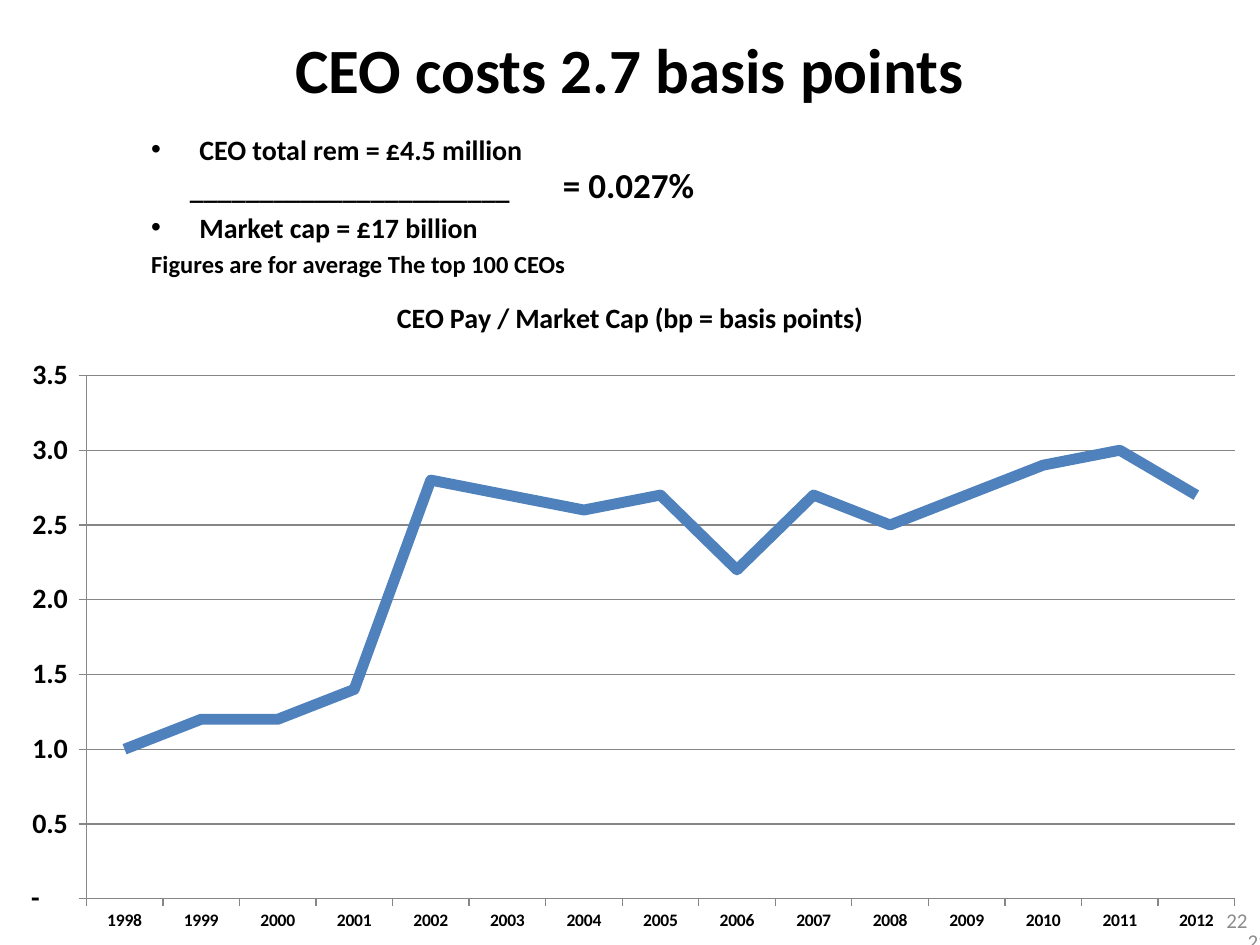
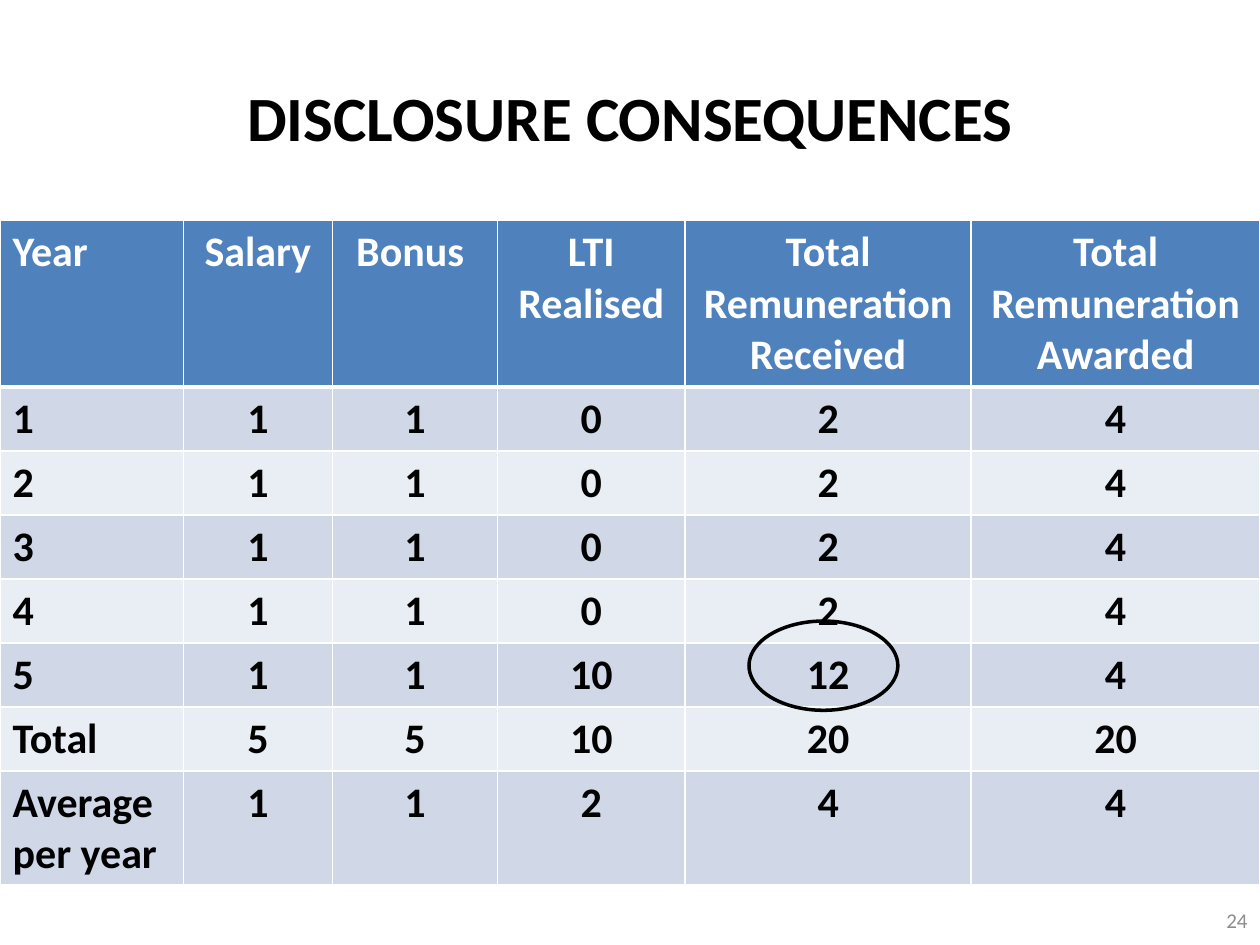
"""Build two slides on chief executive pay: a cost chart and a disclosure table."""
from dataclasses import dataclass

import lxml.etree
import pptx
import pptx.chart.data
import pptx.dml.color
import pptx.enum.chart
import pptx.enum.shapes
import pptx.enum.text
import pptx.oxml
import pptx.oxml.ns
import pptx.util
from pptx.util import Cm

ALIGN = pptx.enum.text.PP_ALIGN
ANCHOR = pptx.enum.text.MSO_ANCHOR


@dataclass(frozen=True)
class Theme:
    """Hold the colours, font and type sizes that the slides share."""
    font: str = "Calibri"
    bullet_font: str = "Arial"
    ink: str = "000000"
    paper: str = "FFFFFF"
    accent: str = "4F81BD"
    odd_row: str = "D0D8E8"
    even_row: str = "E9EDF4"
    grid: str = "868686"
    muted: str = "8C8C8C"
    title: int = 36
    table: int = 24
    result: int = 20
    body: int = 16
    note: int = 14
    small: int = 12
    tick: int = 10


THEME = Theme()

YEARS = [str(year) for year in range(1998, 2013)]
BASIS_POINTS = [1.0, 1.2, 1.2, 1.4, 2.8, 2.7, 2.6, 2.7,
                2.2, 2.7, 2.5, 2.7, 2.9, 3.0, 2.7]
CHART_WIDTH, CHART_HEIGHT = 25.4, 13.51
PAY_ROWS = [
    ["Year", "Salary", "Bonus ", "LTI Realised",
     "Total Remuneration Received", "Total Remuneration Awarded"],
    *[[str(year), "1", "1", "0", "2", "4"] for year in range(1, 5)],
    ["5", "1", "1", "10", "12", "4"],
    ["Total", "5", "5", "10", "20", "20"],
    ["Average per year", "1", "1", "2", "4", "4"],
]
COLUMN_WIDTHS = [3.7, 3, 3.33, 3.78, 5.77, 5.82]
ROW_HEIGHTS = [3.35] + [1.29] * 6 + [2.3]


def colour(code):
    """Return the RGB colour for a hex code."""
    return pptx.dml.color.RGBColor.from_string(code)


def style_font(font, size, ink=THEME.ink, bold=True):
    """Apply the deck's font with a size, colour and weight."""
    font.name = THEME.font
    font.size = pptx.util.Pt(size)
    font.bold = bold
    font.color.rgb = colour(ink)


def write_text(para, text, size=THEME.body, ink=THEME.ink, bold=True,
               align=ALIGN.LEFT, before=0, indent=0, bullet=False):
    """Write one formatted paragraph."""
    properties = para._p.get_or_add_pPr()
    if indent:
        properties.set("marL", str(Cm(indent)))
        properties.set("indent", str(-Cm(indent) if bullet else 0))
    if bullet:
        for tag, name, value in [("a:buFont", "typeface", THEME.bullet_font),
                                 ("a:buChar", "char", "•")]:
            mark = lxml.etree.SubElement(properties, pptx.oxml.ns.qn(tag))
            mark.set(name, value)
    para.alignment = align
    para.space_before = pptx.util.Pt(before)
    span = para.add_run()
    span.text = text
    style_font(span.font, size, ink, bold)


def add_box(page, left, top, width, height, anchor=ANCHOR.TOP):
    """Add a wrapping text box and return its text frame."""
    box = page.shapes.add_textbox(Cm(left), Cm(top), Cm(width), Cm(height))
    frame = box.text_frame
    frame.word_wrap = True
    frame.vertical_anchor = anchor
    return frame


def add_title(page, text, left, top, width, height):
    """Add a centred slide title."""
    frame = add_box(page, left, top, width, height, ANCHOR.MIDDLE)
    write_text(frame.paragraphs[0], text, size=THEME.title, align=ALIGN.CENTER)


def add_page_number(page, number, left=23.7, top=18.03):
    """Add a grey page number at the lower right."""
    frame = add_box(page, left, top, 1.7, 1.02, ANCHOR.MIDDLE)
    write_text(frame.paragraphs[0], str(number), size=THEME.small,
               ink=THEME.muted, bold=False, align=ALIGN.RIGHT)


def add_ratio(page):
    """Add pay over market value as a fraction with its result."""
    lines = [
        ("CEO total rem = £4.5 million", dict(indent=0.97, bullet=True)),
        ("_" * 23, dict(indent=0.78, before=3)),
        ("Market cap = £17 billion", dict(indent=0.97, bullet=True, before=3)),
        ("Figures are for average The top 100 CEOs",
         dict(size=THEME.note, before=3)),
    ]
    frame = add_box(page, 2.8, 2.55, 19.79, 4.39)
    for index, (text, look) in enumerate(lines):
        para = frame.add_paragraph() if index else frame.paragraphs[0]
        write_text(para, text, **look)
    result = add_box(page, 11.1, 3.18, 5.21, 1.2)
    write_text(result.paragraphs[0], "= 0.027%", size=THEME.result)


def place_chart_part(part, left, top, width=None, height=None):
    """Place a chart part by hand, with lengths in centimetres."""
    for old in part.findall(pptx.oxml.ns.qn("c:layout")):
        part.remove(old)
    values = {"xMode": "edge", "yMode": "edge",
              "x": left / CHART_WIDTH, "y": top / CHART_HEIGHT}
    if width:
        values = {"layoutTarget": "inner", **values,
                  "w": width / CHART_WIDTH, "h": height / CHART_HEIGHT}
    settings = "".join(f'<c:{name} val="{value}"/>'
                       for name, value in values.items())
    layout = pptx.oxml.parse_xml(
        f'<c:layout {pptx.oxml.ns.nsdecls("c")}><c:manualLayout>'
        f'{settings}</c:manualLayout></c:layout>')
    text = part.find(pptx.oxml.ns.qn("c:tx"))
    part.insert(0 if text is None else part.index(text) + 1, layout)


def style_axis(axis, size):
    """Give a chart axis its type and grey line."""
    style_font(axis.tick_labels.font, size)
    axis.major_tick_mark = pptx.enum.chart.XL_TICK_MARK.OUTSIDE
    axis.format.line.color.rgb = colour(THEME.grid)
    axis.format.line.width = pptx.util.Pt(0.75)


def add_pay_chart(page):
    """Add the line chart of pay against market value."""
    data = pptx.chart.data.CategoryChartData()
    data.categories = YEARS
    data.add_series("Series 1", BASIS_POINTS)
    chart = page.shapes.add_chart(
        pptx.enum.chart.XL_CHART_TYPE.LINE, Cm(0), Cm(5.54),
        Cm(CHART_WIDTH), Cm(CHART_HEIGHT), data).chart
    style_font(chart.font, THEME.tick)
    chart.has_legend = False
    chart.has_title = True
    write_text(chart.chart_title.text_frame.paragraphs[0],
               "CEO Pay / Market Cap (bp = basis points)", align=ALIGN.CENTER)
    chart.chart_title.include_in_layout = True
    place_chart_part(chart.chart_title._element, 7.9, 0.38)
    place_chart_part(chart._chartSpace.chart.plotArea, 1.74, 2.03, 23.15, 10.55)

    style_axis(chart.category_axis, THEME.tick)
    values = chart.value_axis
    style_axis(values, THEME.body)
    values.minimum_scale, values.maximum_scale, values.major_unit = 0, 3.5, 0.5
    values.has_major_gridlines = True
    values.major_gridlines.format.line.color.rgb = colour(THEME.grid)
    values.major_gridlines.format.line.width = pptx.util.Pt(0.75)
    values.tick_labels.number_format = (
        '_-* #,##0.0_-;\\-* #,##0.0_-;_-* "-"??_-;')
    values.tick_labels.number_format_is_linked = False

    plot = chart.plots[0]
    plot.vary_by_categories = False
    series = plot.series[0]
    series.smooth = False
    series.marker.style = pptx.enum.chart.XL_MARKER_STYLE.NONE
    series.format.line.color.rgb = colour(THEME.accent)
    series.format.line.width = pptx.util.Pt(6.25)


def draw_borders(cell, **widths):
    """Draw white cell borders, keyed by side, in points."""
    properties = cell._tc.get_or_add_tcPr()
    for side, width in widths.items():
        properties.append(pptx.oxml.parse_xml(
            f'<a:ln{side} {pptx.oxml.ns.nsdecls("a")} '
            f'w="{pptx.util.Pt(width)}"><a:solidFill>'
            f'<a:srgbClr val="{THEME.paper}"/></a:solidFill></a:ln{side}>'))


def add_pay_table(page):
    """Add the banded table of pay by year."""
    table = page.shapes.add_table(
        len(PAY_ROWS), len(COLUMN_WIDTHS), Cm(0), Cm(4.45),
        Cm(sum(COLUMN_WIDTHS)), Cm(sum(ROW_HEIGHTS))).table
    for column, width in zip(table.columns, COLUMN_WIDTHS):
        column.width = Cm(width)
    for row, height in zip(table.rows, ROW_HEIGHTS):
        row.height = Cm(height)
    for row_index, texts in enumerate(PAY_ROWS):
        header = row_index == 0
        band = THEME.odd_row if row_index % 2 else THEME.even_row
        for column_index, text in enumerate(texts):
            cell = table.cell(row_index, column_index)
            draw_borders(cell, L=1, R=1, T=3 if row_index == 1 else 1,
                         B=3 if header else 1)
            cell.fill.solid()
            cell.fill.fore_color.rgb = colour(THEME.accent if header else band)
            write_text(cell.text_frame.paragraphs[0], text, size=THEME.table,
                       ink=THEME.paper if header else THEME.ink,
                       align=ALIGN.CENTER if column_index else ALIGN.LEFT)


def add_ring(page, left, top, width, height):
    """Add an unfilled ellipse that marks a value."""
    ring = page.shapes.add_shape(pptx.enum.shapes.MSO_SHAPE.OVAL,
                                 Cm(left), Cm(top), Cm(width), Cm(height))
    ring.shadow.inherit = False
    ring.fill.background()
    ring.line.color.rgb = colour(THEME.ink)
    ring.line.width = pptx.util.Pt(2)


def add_page(deck):
    """Add a blank slide with a plain background."""
    page = deck.slides.add_slide(deck.slide_layouts[6])
    page.background.fill.solid()
    page.background.fill.fore_color.rgb = colour(THEME.paper)
    return page


def main():
    """Build and save the deck."""
    deck = pptx.Presentation()
    deck.slide_width, deck.slide_height = Cm(25.4), Cm(19.05)

    cost = add_page(deck)
    add_title(cost, "CEO costs 2.7 basis points", 2.8, 0.1, 19.79, 2.57)
    add_ratio(cost)
    add_page_number(cost, 22)
    add_page_number(cost, 22, left=24.13, top=18.46)
    add_pay_chart(cost)

    disclosure = add_page(deck)
    add_title(disclosure, "DISCLOSURE CONSEQUENCES", 1.27, 0.76, 22.86, 3.18)
    add_pay_table(disclosure)
    add_page_number(disclosure, 24)
    add_ring(disclosure, 15.1, 12.52, 3, 1.8)

    deck.save("out.pptx")


if __name__ == "__main__":
    main()
